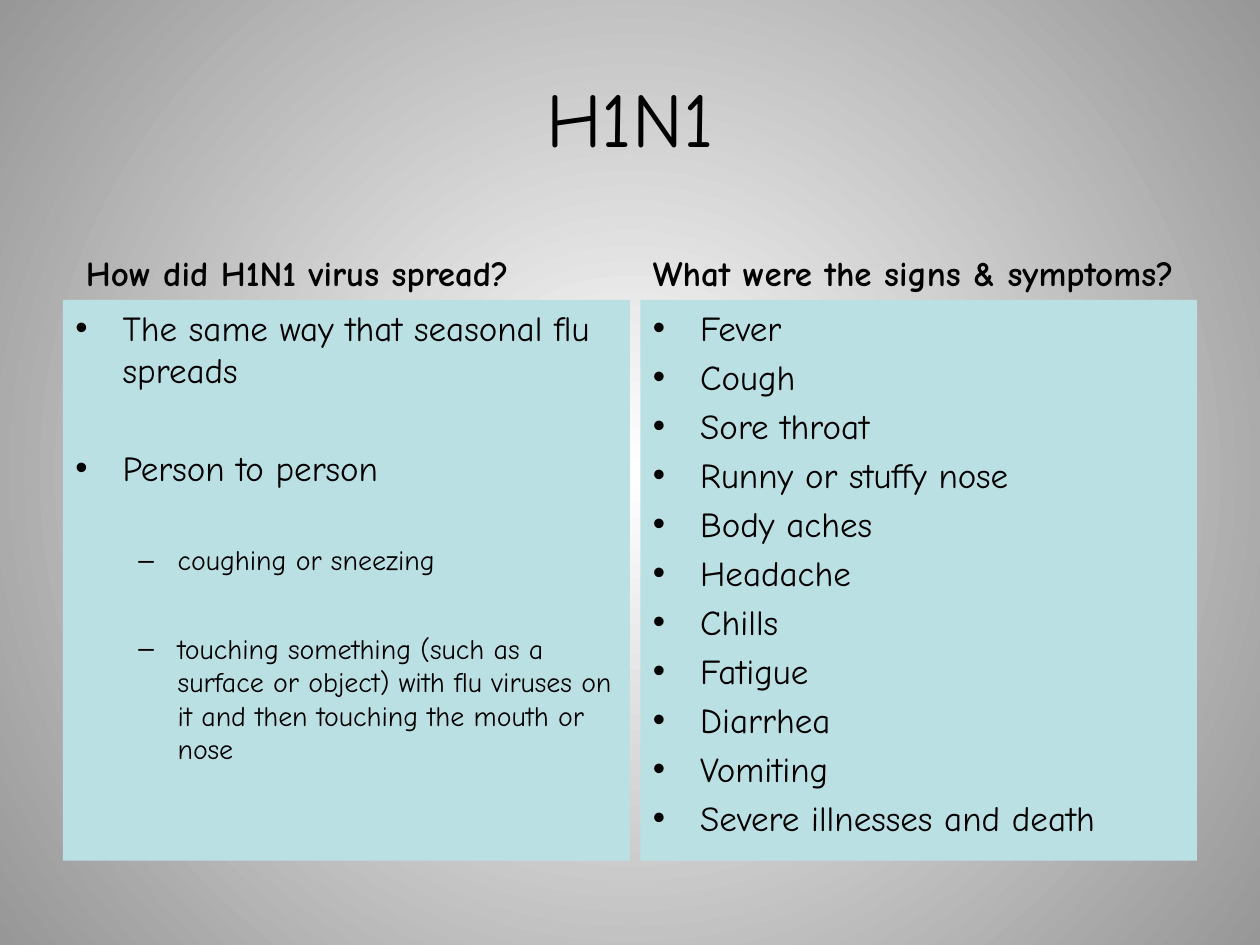
"""Build the H1N1 comparison slide: how the virus spread, and its symptoms."""
from pptx import Presentation
from pptx.dml.color import RGBColor
from pptx.enum.shapes import MSO_SHAPE as Shape
from pptx.enum.text import MSO_ANCHOR as Anchor, PP_ALIGN as Align
from pptx.oxml.ns import qn
from pptx.util import Pt
from lxml.etree import SubElement


def color(value):
    return RGBColor.from_string(value)


def write(box, lines, size, anchor, bold=False):
    frame = box.text_frame
    frame.word_wrap = True
    frame.vertical_anchor = anchor
    frame.text = "\n".join(lines)
    for para in frame.paragraphs:
        para.alignment = Align.LEFT
        for span in para.runs:
            span.font.name = "Comic Neue"
            span.font.size = Pt(size)
            span.font.bold = bold
            span.font.color.rgb = color("000000")
    return frame.paragraphs


deck = Presentation()
deck.slide_width, deck.slide_height = Pt(720), Pt(540)
page = deck.slides.add_slide(deck.slide_layouts[6])

backdrop = page.background.fill
backdrop.gradient()
for stop, shade in zip(backdrop.gradient_stops, ("FFFFFF", "979797")):
    stop.color.rgb = color(shade)
gradient = page.element.find(".//" + qn("a:gradFill"))
gradient.remove(gradient.find(qn("a:lin")))
circle = SubElement(gradient, qn("a:path"), path="circle")
SubElement(circle, qn("a:fillToRect"), l="50000", t="50000", r="50000", b="50000")

title = page.shapes.add_textbox(Pt(0), Pt(21.6), Pt(720), Pt(90))
write(title, ["H1N1"], 44, Anchor.MIDDLE)[0].alignment = Align.CENTER

# Each item: text, outline level, space before
spread = [
    ("The same way that seasonal flu spreads", 0, 0),
    ("Person to person", 0, 32),
    ("coughing or sneezing", 1, 31.2),
    ("touching something (such as a surface or object) with flu viruses on "
     "it and then touching the mouth or nose", 1, 31.2),
]
symptoms = ["Fever", "Cough", "Sore throat", "Runny or stuffy nose", "Body aches",
            "Headache", "Chills", "Fatigue", "Diarrhea", "Vomiting",
            "Severe illnesses and death"]
signs = [(name, 0, 4 if index else 0) for index, name in enumerate(symptoms)]

levels = [("•", 27, 27, 20), ("–", 58.5, 22.5, 16)]
columns = [
    ("How did H1N1 virus spread?", 42, 312, 36, 324, spread),
    ("What were the signs & symptoms?", 366, 354, 366, 318, signs),
]

for heading, head_left, head_width, left, width, items in columns:
    label = page.shapes.add_textbox(Pt(head_left), Pt(121), Pt(head_width), Pt(50.4))
    write(label, [heading], 20, Anchor.BOTTOM, bold=True)

    panel = page.shapes.add_shape(Shape.RECTANGLE, Pt(left), Pt(171.4), Pt(width), Pt(320.4))
    panel.shadow.inherit = False
    panel.fill.solid()
    panel.fill.fore_color.rgb = color("BBE0E3")
    panel.line.fill.background()
    paras = write(panel, [item[0] for item in items], 20, Anchor.TOP)
    for para, (text, level, gap) in zip(paras, items):
        mark, margin, hanging, size = levels[level]
        para.level = level
        para.space_before = Pt(gap)
        para.runs[0].font.size = Pt(size)
        props = para._p.get_or_add_pPr()
        props.set("marL", str(Pt(margin)))
        props.set("indent", str(-Pt(hanging)))
        SubElement(props, qn("a:buFont"), typeface="Arial")
        SubElement(props, qn("a:buChar"), char=mark)

deck.save("out.pptx")
